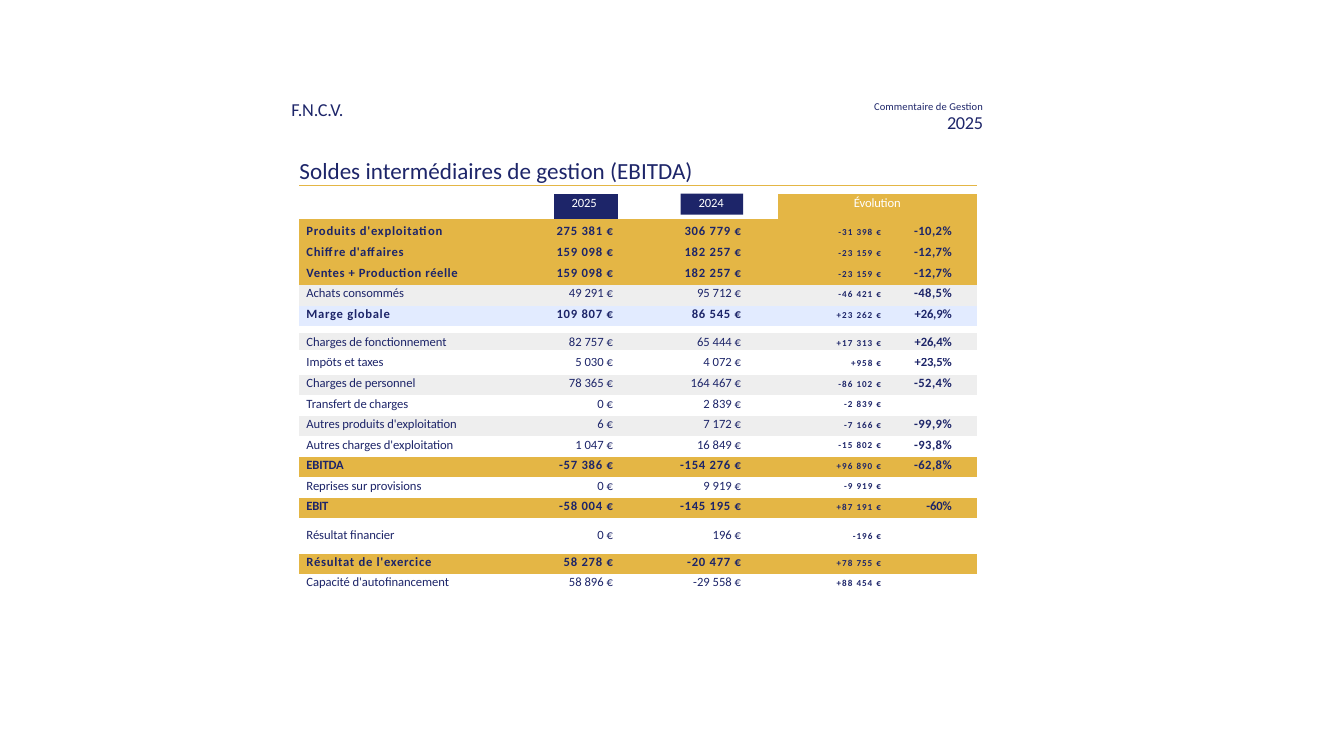
from dataclasses import dataclass

from lxml.etree import SubElement
from pptx import Presentation
from pptx.dml.color import RGBColor
from pptx.enum.shapes import MSO_SHAPE
from pptx.enum.text import MSO_ANCHOR, MSO_AUTO_SIZE, PP_ALIGN
from pptx.oxml.ns import qn
from pptx.util import Inches, Pt

COLORS = {"navy": "1D2569", "gold": "E4B645", "grey": "EEEEEE", "blue": "E2EBFF", "white": "FFFFFF"}
NO_GRID_STYLE = "{2D5ABB26-0587-4C30-8999-92F81FD0307C}"
TABLE_HEIGHT = 4.03
COLUMN_WIDTHS = [2.52, 0.64, 1.24, 0.35, 1.26, 0.71]
RIGHT_MARGINS = [0, 0.05, 0.02, 0, 0.24, 0.25]


@dataclass
class Balance:
    label: str
    y2025: str
    y2024: str
    change: str
    percent: str = ""
    fill: str = ""
    bold: bool = False
    spacing: float = -0.05
    height: float = 0
    top: float = 0.01
    line: float = 0


@dataclass
class Heading:
    column: int
    text: str
    left: float
    fill: str


BALANCES = [
    Balance("Produits d'exploitation", "275 381 €", "306 779 €", "-31 398 €", "-10,2%", "gold", True, 0.55, 0.25, 0.05),
    Balance("Chiffre d'affaires", "159 098 €", "182 257 €", "-23 159 €", "-12,7%", "gold", True, 0.45),
    Balance("Ventes + Production réelle", "159 098 €", "182 257 €", "-23 159 €", "-12,7%", "gold", True, 0.4),
    Balance("Achats consommés", "49 291 €", "95 712 €", "-46 421 €", "-48,5%", "grey"),
    Balance("Marge globale", "109 807 €", "86 545 €", "+23 262 €", "+26,9%", "blue", True, 0.5, 0.24),
    Balance("Charges de fonctionnement", "82 757 €", "65 444 €", "+17 313 €", "+26,4%", "grey", height=0.24, top=0.05),
    Balance("Impôts et taxes", "5 030 €", "4 072 €", "+958 €", "+23,5%"),
    Balance("Charges de personnel", "78 365 €", "164 467 €", "-86 102 €", "-52,4%", "grey"),
    Balance("Transfert de charges", "0 €", "2 839 €", "-2 839 €"),
    Balance("Autres produits d'exploitation", "6 €", "7 172 €", "-7 166 €", "-99,9%", "grey"),
    Balance("Autres charges d'exploitation", "1 047 €", "16 849 €", "-15 802 €", "-93,8%"),
    Balance("EBITDA", "-57 386 €", "-154 276 €", "+96 890 €", "-62,8%", "gold", True, -0.1),
    Balance("Reprises sur provisions", "0 €", "9 919 €", "-9 919 €"),
    Balance("EBIT", "-58 004 €", "-145 195 €", "+87 191 €", "-60%", "gold", True, -0.2),
    Balance("Résultat financier", "0 €", "196 €", "-196 €", height=0.35, top=0.09),
    Balance("Résultat de l'exercice", "58 278 €", "-20 477 €", "+78 755 €", "", "gold", True, 0.5),
    Balance("Capacité d'autofinancement", "58 896 €", "-29 558 €", "+88 454 €", height=0.17, line=10.2),
]
HEADINGS = [
    Heading(1, "2025", 0.18, "navy"),
    Heading(2, "2024", 0.8, ""),
    Heading(4, "Évolution", 0.75, "gold"),
    Heading(5, "", 0, "gold"),
]


def rgb(name: str) -> RGBColor:
    return RGBColor.from_string(COLORS[name])


def write(p, text: str, *, size: float = 9, color: str = "navy", bold: bool = False,
          spacing: float = 0, align=PP_ALIGN.LEFT, line: float = 0) -> None:
    p.alignment = align
    if line:
        p.line_spacing = Pt(line)
    r = p.add_run()
    r.text = text
    r.font.name = "Calibri"
    r.font.size = Pt(size)
    r.font.bold = bold
    r.font.color.rgb = rgb(color)
    r._r.get_or_add_rPr().set("spc", str(round(spacing * 100)))


def prepare_frame(tf) -> None:
    tf.margin_left = tf.margin_right = tf.margin_bottom = 0
    tf.margin_top = Inches(0.02)
    tf.vertical_anchor = MSO_ANCHOR.TOP
    tf.auto_size = MSO_AUTO_SIZE.NONE
    tf.word_wrap = True


def add_textbox(s, left: float, top: float, width: float, height: float):
    tf = s.shapes.add_textbox(Inches(left), Inches(top), Inches(width), Inches(height)).text_frame
    prepare_frame(tf)
    return tf


def set_border(cell, side: str, color: str, width: float) -> None:
    tc_pr = cell._tc.get_or_add_tcPr()
    ln = SubElement(tc_pr, qn(f"a:ln{side}"), w=str(Pt(width)))
    SubElement(SubElement(ln, qn("a:solidFill")), qn("a:srgbClr"), val=COLORS[color])
    tc_pr.insert(0, ln)


def fill_cell(cell, fill: str) -> None:
    if fill:
        cell.fill.solid()
        cell.fill.fore_color.rgb = rgb(fill)
    else:
        cell.fill.background()


def write_balance(table, row: int, b: Balance) -> None:
    amount = {"bold": b.bold, "spacing": 0.55 if b.bold else 0, "align": PP_ALIGN.RIGHT, "line": b.line}
    change = {"size": 6.5, "bold": True, "spacing": 0.75, "align": PP_ALIGN.RIGHT}
    tight = b.percent.startswith("+") or "," not in b.percent
    percent = {"bold": True, "spacing": -0.1 if tight else 0.3, "align": PP_ALIGN.RIGHT}
    label = {"bold": b.bold, "spacing": b.spacing, "line": b.line}
    entries = [(b.label, label), (b.y2025, amount), (b.y2024, amount), ("", {}),
               (b.change, change), (b.percent, percent)]
    for column, (text, fmt) in enumerate(entries):
        cell = table.cell(row, column)
        fill_cell(cell, b.fill)
        if text:
            cell.margin_left = Inches(0.07 if column == 0 else 0)
            cell.margin_top = Inches(b.top + (0.03 if column == 4 else 0))
            write(cell.text_frame.paragraphs[0], text, **fmt)


def add_balance_table(s) -> None:
    heights = [0.08, 0.25] + [b.height for b in BALANCES]
    regular = (TABLE_HEIGHT - sum(heights)) / heights.count(0)
    frame = s.shapes.add_table(len(heights), len(COLUMN_WIDTHS), Inches(2.97), Inches(1.84),
                               Inches(sum(COLUMN_WIDTHS)), Inches(TABLE_HEIGHT))
    table = frame.table
    table.first_row = table.horz_banding = False
    table._tbl.tblPr.find(qn("a:tableStyleId")).text = NO_GRID_STYLE
    for column, width in zip(table.columns, COLUMN_WIDTHS):
        column.width = Inches(width)
    for row, height in zip(table.rows, heights):
        row.height = Inches(height or regular)
        for cell, right in zip(row.cells, RIGHT_MARGINS):
            cell.margin_left = cell.margin_top = cell.margin_bottom = 0
            cell.margin_right = Inches(right)
            cell.fill.background()
            cell.text_frame.paragraphs[0]._p.get_or_add_endParaRPr().set("sz", "300")
    for h in HEADINGS:
        cell = table.cell(1, h.column)
        fill_cell(cell, h.fill)
        if h.text:
            cell.margin_left, cell.margin_top, cell.margin_right = Inches(h.left), Inches(0.02), 0
            write(cell.text_frame.paragraphs[0], h.text, color="white", spacing=-0.1)
    for row, b in enumerate(BALANCES, 2):
        write_balance(table, row, b)
    margin_row = 2 + [b.label for b in BALANCES].index("Marge globale")
    for column in range(len(COLUMN_WIDTHS)):
        set_border(table.cell(0, column), "T", "gold", 0.75)
        set_border(table.cell(margin_row, column), "B", "white", 6)
        set_border(table.cell(margin_row + 1, column), "T", "white", 6)
    table.cell(0, 0).merge(table.cell(1, 0))


def main() -> None:
    prs = Presentation()
    prs.slide_width, prs.slide_height = Inches(13.33), Inches(7.5)
    s = prs.slides.add_slide(prs.slide_layouts[5])

    title = s.shapes.title
    title.left, title.top, title.width, title.height = Inches(2.97), Inches(1.53), Inches(4.2), Inches(0.31)
    prepare_frame(title.text_frame)
    write(title.text_frame.paragraphs[0], "Soldes intermédiaires de gestion (EBITDA)", size=16.5, spacing=0.05)

    tf = add_textbox(s, 2.89, 0.96, 0.8, 0.25)
    write(tf.paragraphs[0], "F.N.C.V.", size=13, spacing=-0.1)

    tf = add_textbox(s, 8.35, 0.99, 1.4, 0.34)
    write(tf.paragraphs[0], "Commentaire de Gestion", size=7.5, spacing=0.05, align=PP_ALIGN.RIGHT, line=7.8)
    write(tf.add_paragraph(), "2025", size=13, spacing=-0.2, align=PP_ALIGN.RIGHT, line=14.4)

    badge = s.shapes.add_shape(MSO_SHAPE.RECTANGLE, Inches(6.75), Inches(1.92), Inches(0.62), Inches(0.21))
    badge.shadow.inherit = False
    badge.fill.solid()
    badge.fill.fore_color.rgb = rgb("navy")
    badge.line.fill.background()

    add_balance_table(s)
    prs.save("out.pptx")


if __name__ == "__main__":
    main()
